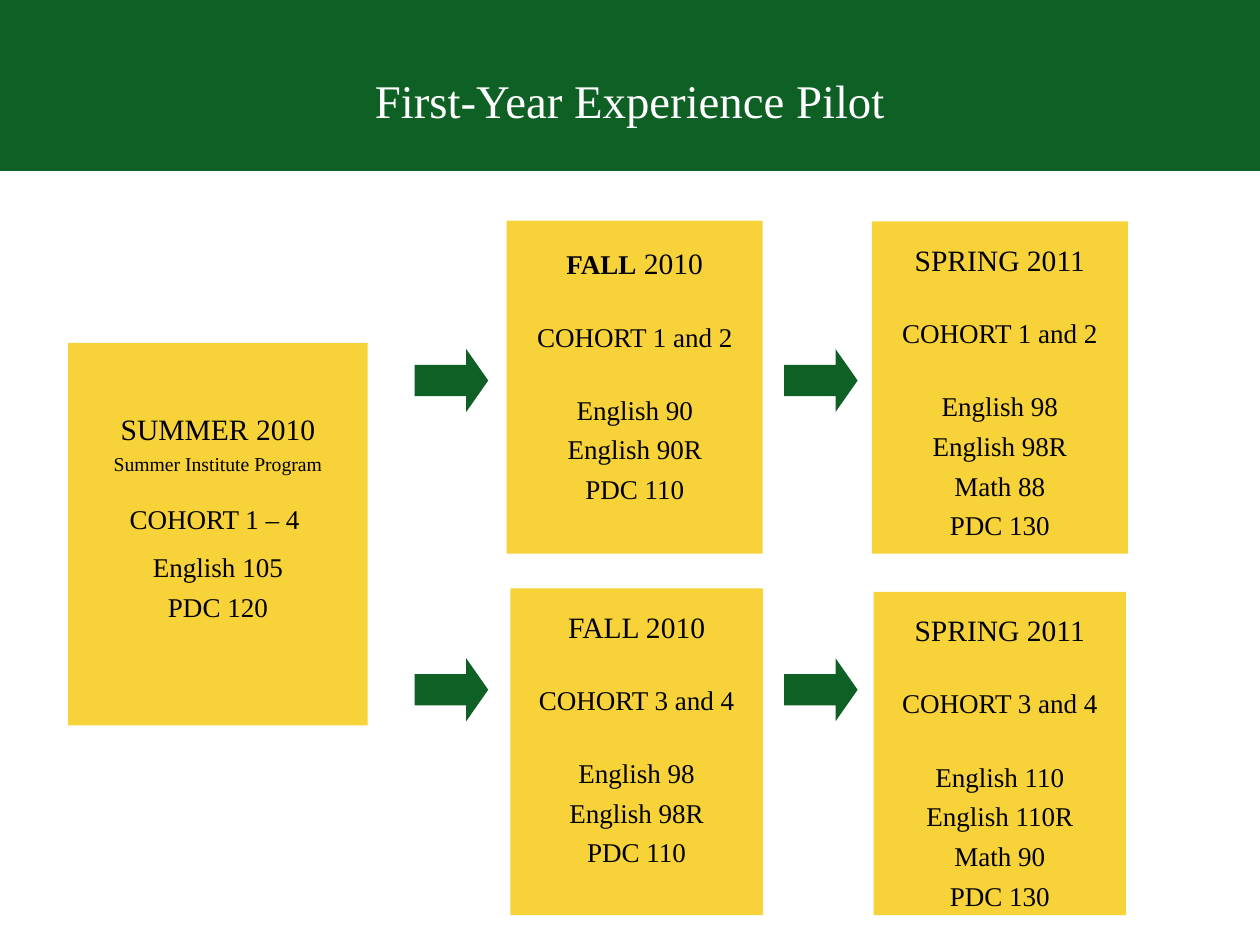
from itertools import product

from pptx import Presentation
from pptx.dml.color import RGBColor
from pptx.enum.shapes import MSO_SHAPE
from pptx.enum.text import MSO_ANCHOR, MSO_AUTO_SIZE, PP_ALIGN
from pptx.oxml.ns import qn
from pptx.util import Pt

RECT, ARROW = MSO_SHAPE.RECTANGLE, MSO_SHAPE.RIGHT_ARROW
TOP, MIDDLE = MSO_ANCHOR.TOP, MSO_ANCHOR.MIDDLE
CENTER, NO_FIT = PP_ALIGN.CENTER, MSO_AUTO_SIZE.NONE

GREEN = RGBColor(0x0E, 0x60, 0x25)
YELLOW = RGBColor(0xF7, 0xD2, 0x38)
WHITE = RGBColor(0xFF, 0xFF, 0xFF)
BLACK = RGBColor(0, 0, 0)
FONT = "Times New Roman"

SLIDE_W, SLIDE_H = 1024, 768
BAND = (0, 0, SLIDE_W, 139)
TITLE = "First-Year Experience Pilot"
TITLE_AT = (77, 17.3, 870, 128)

TERM_SIZE, NOTE_SIZE, TEXT_SIZE = 24, 16, 22
NOTE_GAP, COURSE_GAP = 4.8, 5.9
TERM_GAPS = (32, 33)
SUMMER_GAPS = (21.8, 12.9)

FALL_FIRST = {
    "at": (411.8, 179.3, 208.1, 270.7), "inset": 20, "gaps": TERM_GAPS,
    "term": [("FALL", TEXT_SIZE, True), (" 2010", TERM_SIZE, False)],
    "cohort": "COHORT 1 and 2",
    "courses": ["English 90", "English 90R", "PDC 110"],
}
OTHER_TERMS = [
    {"at": (708.5, 180, 208.1, 270), "inset": 16.4, "gaps": TERM_GAPS,
     "term": [("SPRING 2011", TERM_SIZE, False)],
     "cohort": "COHORT 1 and 2",
     "courses": ["English 98", "English 98R", "Math 88", "PDC 130"]},
    {"at": (414.7, 478.1, 205.2, 265.7), "inset": 16.4, "gaps": TERM_GAPS,
     "term": [("FALL 2010", TERM_SIZE, False)],
     "cohort": "COHORT 3 and 4",
     "courses": ["English 98", "English 98R", "PDC 110"]},
    {"at": (709.9, 481, 205.2, 262.8), "inset": 16.4, "gaps": TERM_GAPS,
     "term": [("SPRING 2011", TERM_SIZE, False)],
     "cohort": "COHORT 3 and 4",
     "courses": ["English 110", "English 110R", "Math 90", "PDC 130"]},
    {"at": (55.4, 278.6, 243.4, 311), "inset": 55, "gaps": SUMMER_GAPS,
     "term": [("SUMMER 2010", TERM_SIZE, False)],
     "note": "Summer Institute Program",
     "cohort": "COHORT 1 – 4 ",
     "courses": ["English 105", "PDC 120"]},
]
ARROW_LEFTS, ARROW_TOPS = (337, 637.2), (283.7, 535)
ARROW_W, ARROW_H = 59.8, 51.1


def place(sp, at):
    sp.left, sp.top, sp.width, sp.height = map(Pt, at)


def add_block(slide, kind, at, color):
    sp = slide.shapes.add_shape(kind, *map(Pt, at))
    sp.shadow.inherit = False
    sp.fill.solid()
    sp.fill.fore_color.rgb = color
    sp.line.fill.background()
    return sp


def set_frame(tf, anchor, inset_top, inset_side):
    tf.word_wrap = True
    tf.auto_size = NO_FIT
    tf.vertical_anchor = anchor
    tf.margin_top = Pt(inset_top)
    tf.margin_left = tf.margin_right = tf.margin_bottom = Pt(inset_side)


def add_run(p, text, size, bold, color):
    r = p.add_run()
    r.text = text
    r.font.name = FONT
    r.font.size = Pt(size)
    r.font.bold = bold
    r.font.color.rgb = color


def write_term(sp, term):
    tf = sp.text_frame
    set_frame(tf, TOP, term["inset"], 0)
    cohort_gap, course_gap = term["gaps"]
    lines = [(term["term"], 0)]
    if "note" in term:
        lines.append(([(term["note"], NOTE_SIZE, False)], NOTE_GAP))
    lines.append(([(term["cohort"], TEXT_SIZE, False)], cohort_gap))
    for i, course in enumerate(term["courses"]):
        gap = COURSE_GAP if i else course_gap
        lines.append(([(course, TEXT_SIZE, False)], gap))
    for i, (runs, gap) in enumerate(lines):
        p = tf.add_paragraph() if i else tf.paragraphs[0]
        p.alignment = CENTER
        p.line_spacing = 1.0
        p.space_before = Pt(gap)
        p.space_after = Pt(0)
        pPr = p._p.get_or_add_pPr()
        pPr.set("marL", "0")
        pPr.set("indent", "0")
        pPr.append(pPr.makeelement(qn("a:buNone"), {}))
        for text, size, bold in runs:
            add_run(p, text, size, bold, BLACK)


def main():
    prs = Presentation()
    prs.slide_width, prs.slide_height = Pt(SLIDE_W), Pt(SLIDE_H)
    slide = prs.slides.add_slide(prs.slide_layouts[1])

    band = add_block(slide, RECT, BAND, GREEN)
    slide.shapes._spTree.insert(2, band._element)

    title = slide.shapes.title
    place(title, TITLE_AT)
    set_frame(title.text_frame, MIDDLE, 3, 3)
    p = title.text_frame.paragraphs[0]
    p.alignment = CENTER
    add_run(p, TITLE, 38, False, WHITE)

    body = slide.placeholders[1]
    place(body, FALL_FIRST["at"])
    body.fill.solid()
    body.fill.fore_color.rgb = YELLOW
    write_term(body, FALL_FIRST)

    for term in OTHER_TERMS:
        write_term(add_block(slide, RECT, term["at"], YELLOW), term)

    for left, top in product(ARROW_LEFTS, ARROW_TOPS):
        arrow = add_block(slide, ARROW, (left, top, ARROW_W, ARROW_H), GREEN)
        arrow.adjustments[0] = 0.5
        arrow.adjustments[1] = 0.35

    prs.save("out.pptx")


if __name__ == "__main__":
    main()
